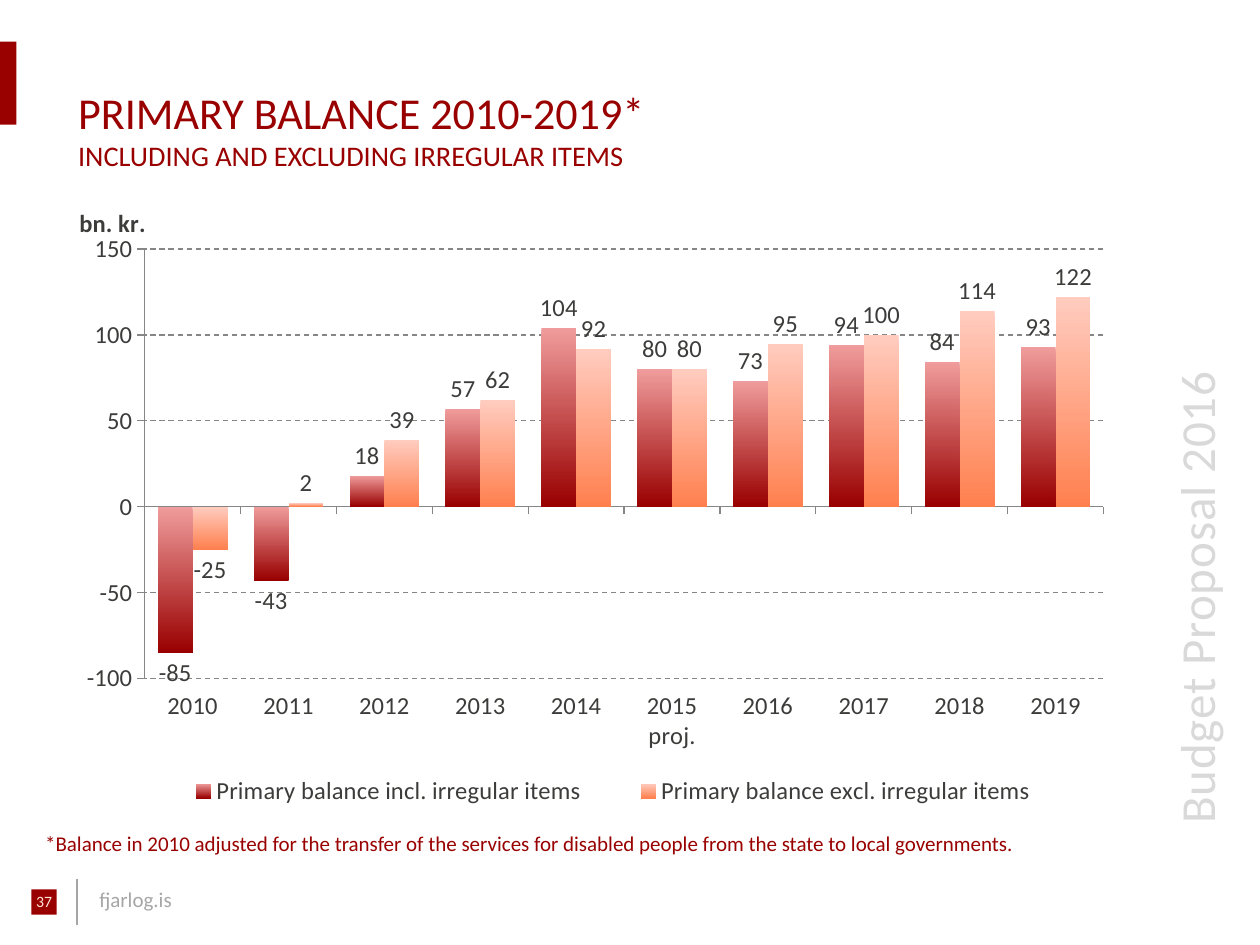
from dataclasses import dataclass

from pptx import Presentation
from pptx.chart.data import CategoryChartData
from pptx.dml.color import RGBColor
from pptx.enum.chart import XL_CHART_TYPE, XL_LABEL_POSITION as LabelPos
from pptx.enum.chart import XL_LEGEND_POSITION, XL_TICK_LABEL_POSITION, XL_TICK_MARK
from pptx.enum.dml import MSO_LINE
from pptx.enum.shapes import MSO_CONNECTOR, MSO_SHAPE
from pptx.enum.text import MSO_ANCHOR, PP_ALIGN
from pptx.oxml import parse_xml
from pptx.oxml.ns import nsdecls, qn
from pptx.util import Inches, Pt

FONT = "Calibri"
COLORS = {"red": "990000", "red_light": "F09C9C", "orange": "FF804F",
          "orange_light": "FFCCBF", "text": "3C3C3B", "axis": "868686",
          "gray": "A6A6A6", "pale": "D9D9D9", "cream": "FFE6DC"}
YEARS = ["2010", "2011", "2012", "2013", "2014", "2015 proj.",
         "2016", "2017", "2018", "2019"]


@dataclass
class Block:
    left: float
    top: float
    width: float
    height: float


@dataclass
class Label(Block):
    text: str
    size: float
    color: str
    rotation: float = 0
    align: PP_ALIGN = PP_ALIGN.LEFT
    spacing: int = 0


@dataclass
class Series:
    name: str
    values: list[float]
    top_color: str
    bottom_color: str


BLOCKS = [Block(0.25, 7.06, 0.2, 0.2), Block(0, 0.33, 0.13, 0.66)]
LABELS = [
    Label(6.78, 3.64, 5.42, 0.57, "Budget Proposal 2016", 28, "pale", 270, spacing=50),
    Label(0.69, 6.99, 1.87, 0.3, "fjarlog.is", 12, "gray"),
    Label(0, 7.03, 0.7, 0.3, "37", 9, "cream", align=PP_ALIGN.CENTER),
    Label(0.26, 6.54, 9.06, 0.3,
          "*Balance in 2010 adjusted for the transfer of the services for "
          "disabled people from the state to local governments.", 12, "red"),
]
SERIES = [
    Series("Primary balance incl. irregular items",
           [-85, -43, 18, 57, 104, 80, 73, 94, 84, 93], "red_light", "red"),
    Series("Primary balance excl. irregular items",
           [-25, 2, 39, 62, 92, 80, 95, 100, 114, 122], "orange_light", "orange"),
]


def rgb(name: str) -> RGBColor:
    return RGBColor.from_string(COLORS[name])


def box(b: Block) -> tuple:
    return Inches(b.left), Inches(b.top), Inches(b.width), Inches(b.height)


def style(font, size: float, color: str) -> None:
    font.name, font.size = FONT, Pt(size)
    font.color.rgb = rgb(color)


def add_block(slide, block: Block) -> None:
    sp = slide.shapes.add_shape(MSO_SHAPE.RECTANGLE, *box(block))
    sp.shadow.inherit = False
    sp.fill.solid()
    sp.fill.fore_color.rgb = rgb("red")
    sp.line.fill.background()


def add_label(slide, label: Label) -> None:
    sp = slide.shapes.add_textbox(*box(label))
    sp.rotation = label.rotation
    tf = sp.text_frame
    tf.word_wrap = True
    p = tf.paragraphs[0]
    r = p.add_run()
    r.text = label.text
    p.alignment = label.align
    style(p.font, label.size, label.color)
    if label.spacing:
        r.font._element.set("spc", str(label.spacing))


def add_divider(slide) -> None:
    line = slide.shapes.add_connector(
        MSO_CONNECTOR.STRAIGHT, Inches(0.61), Inches(6.98), Inches(0.61), Inches(7.34))
    line.line.color.rgb = rgb("gray")
    line.line.width = Pt(1)
    line._element.spPr.append(parse_xml(f"<a:effectLst {nsdecls('a')}/>"))


def fill_title(slide) -> None:
    sp = slide.shapes.title
    sp.left, sp.top, sp.width, sp.height = box(Block(0.5, 0.62, 9.06, 0.81))
    tf = sp.text_frame
    tf.margin_left = tf.margin_right = Inches(0.12)
    tf.margin_top = tf.margin_bottom = Inches(0.06)
    tf.vertical_anchor = MSO_ANCHOR.MIDDLE
    p = tf.paragraphs[0]
    p.alignment = PP_ALIGN.LEFT
    heading = p.add_run()
    heading.text = "PRIMARY BALANCE 2010-2019*"
    p.add_line_break()
    subheading = p.add_run()
    subheading.text = "INCLUDING AND EXCLUDING IRREGULAR ITEMS"
    for r, size in ((heading, 25.2), (subheading, 16.2)):
        style(r.font, size, "red")


def set_layout(element, index: int, target: str = "", **values: float) -> None:
    """Give a chart part a manual layout in fractions of the chart."""
    old = element.find(qn("c:layout"))
    if old is not None:
        element.remove(old)
    inner = f'<c:layoutTarget val="{target}"/>' if target else ""
    inner += "".join(f'<c:{k}Mode val="edge"/>' for k in ("x", "y"))
    inner += "".join(f'<c:{k} val="{v}"/>' for k, v in values.items())
    element.insert(index, parse_xml(
        f"<c:layout {nsdecls('c')}><c:manualLayout>{inner}</c:manualLayout></c:layout>"))


def style_axes(chart) -> None:
    cat, val = chart.category_axis, chart.value_axis
    for axis in (cat, val):
        axis.major_tick_mark = XL_TICK_MARK.OUTSIDE
        axis.minor_tick_mark = XL_TICK_MARK.NONE
        axis.format.line.color.rgb = rgb("axis")
    cat.tick_label_position = XL_TICK_LABEL_POSITION.LOW
    val.minimum_scale, val.maximum_scale, val.major_unit = -100, 150, 50
    grid = val.major_gridlines.format.line
    grid.color.rgb = rgb("axis")
    grid.dash_style = MSO_LINE.DASH
    grid.width = Pt(0.75)
    tf = val.axis_title.text_frame
    tf.text = "bn. kr."
    style(tf.paragraphs[0].font, 14, "text")
    tf.paragraphs[0].font.bold = True
    body = tf._txBody.find(qn("a:bodyPr"))
    body.set("rot", "0")
    body.set("vert", "horz")
    set_layout(val.axis_title._element, 1, x=0.025, y=0.07)


def add_balance_chart(slide) -> None:
    data = CategoryChartData(number_format="#,##0")
    data.categories = YEARS
    for item in SERIES:
        data.add_series(item.name, item.values)
    chart = slide.shapes.add_chart(XL_CHART_TYPE.COLUMN_CLUSTERED,
                                   *box(Block(0.38, 1.22, 8.55, 5.41)), data).chart
    style(chart.font, 14, "text")
    chart.has_title = False
    chart.has_legend = True
    chart.legend.position = XL_LEGEND_POSITION.BOTTOM
    chart.legend.include_in_layout = False
    set_layout(chart.legend._element, 1, x=0.09, y=0.9, w=0.87, h=0.07)
    style_axes(chart)
    plot = chart.plots[0]
    plot.gap_width, plot.overlap = 75, 0
    plot.vary_by_categories = False
    set_layout(chart._chartSpace.chart.plotArea, 0, "inner",
               x=0.09, y=0.14, w=0.89, h=0.63)
    for item, series in zip(SERIES, plot.series):
        series.invert_if_negative = False
        fill = series.format.fill
        fill.gradient()
        fill.gradient_angle = 270
        for stop, color in zip(fill.gradient_stops, (item.top_color, item.bottom_color)):
            stop.color.rgb = rgb(color)
        labels = series.data_labels
        labels.show_value = True
        labels.number_format, labels.number_format_is_linked = "#,##0", False
        labels.position = LabelPos.OUTSIDE_END
        style(labels.font, 14, "text")


def main() -> None:
    prs = Presentation()
    prs.slide_width, prs.slide_height = Inches(10), Inches(7.5)
    slide = prs.slides.add_slide(prs.slide_layouts[5])
    for block in BLOCKS:
        add_block(slide, block)
    add_divider(slide)
    fill_title(slide)
    add_balance_chart(slide)
    for label in LABELS:
        add_label(slide, label)
    prs.save("out.pptx")


if __name__ == "__main__":
    main()
